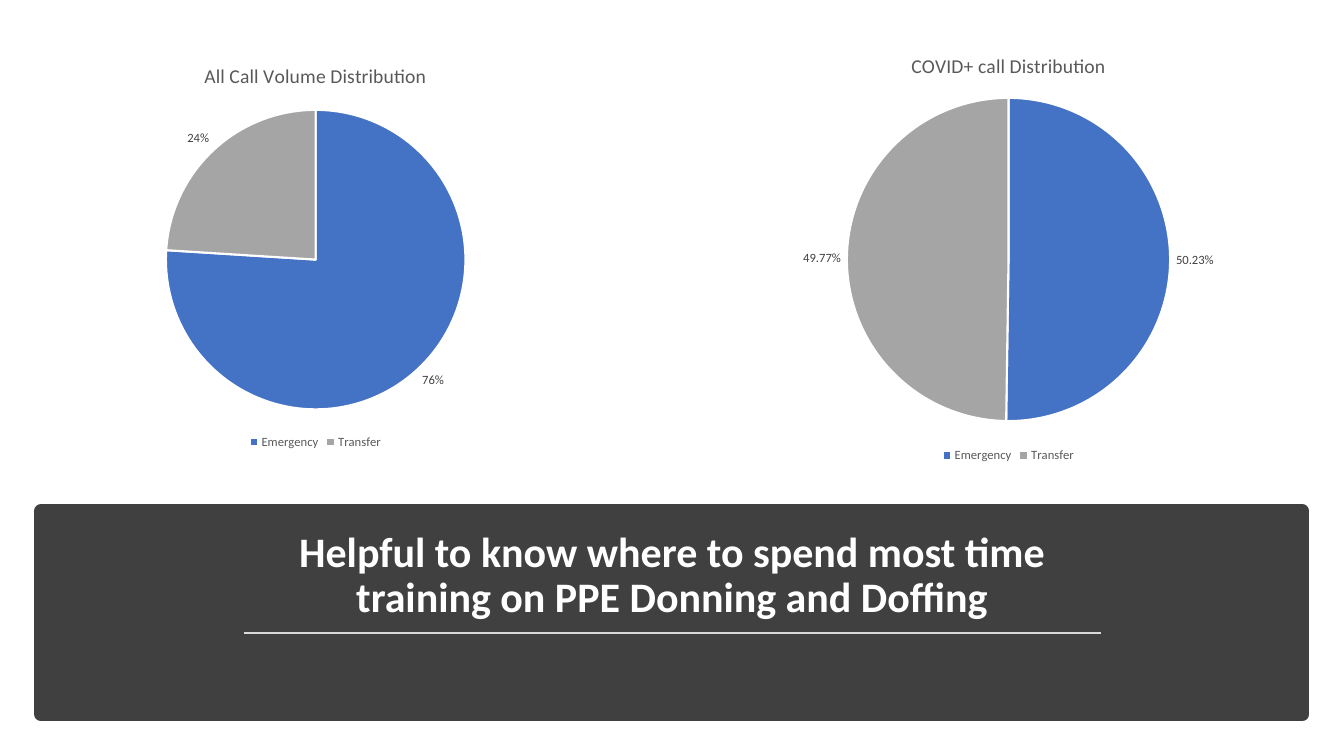
"""Build a slide that compares two call distributions above a titled band."""
from dataclasses import dataclass

from lxml.etree import SubElement
from pptx import Presentation
from pptx.chart.data import CategoryChartData as ChartData
from pptx.dml.color import RGBColor
from pptx.enum.chart import XL_CHART_TYPE as ChartType
from pptx.enum.chart import XL_LABEL_POSITION as LabelPosition
from pptx.enum.chart import XL_LEGEND_POSITION as LegendPosition
from pptx.enum.shapes import MSO_CONNECTOR as Connector
from pptx.enum.shapes import MSO_SHAPE as Shape
from pptx.enum.text import MSO_ANCHOR as Anchor
from pptx.enum.text import MSO_AUTO_SIZE as AutoSize
from pptx.enum.text import PP_ALIGN as Align
from pptx.oxml import parse_xml
from pptx.oxml.ns import nsdecls, qn
from pptx.util import Pt


@dataclass(frozen=True)
class Theme:
    font: str = "Calibri"
    white: str = "FFFFFF"
    band: str = "404040"
    rule: str = "D9D9D9"
    muted: str = "595959"
    slices: tuple = ("4472C4", "A5A5A5")
    title_size: float = 30
    chart_title_size: float = 14
    chart_size: float = 10
    label_size: float = 9


def color(value):
    return RGBColor.from_string(value)


def format_font(font, *, name, size, fill, bold=False):
    font.name = name
    font.size = Pt(size)
    font.bold = bold
    font.color.rgb = color(fill)


def write_text(frame, text, *, align=Align.CENTER, spacing=None, after=None, **style):
    frame.text = text
    paragraph = frame.paragraphs[0]
    paragraph.alignment = align
    if spacing is not None:
        paragraph.line_spacing = spacing
    if after is not None:
        paragraph.space_after = Pt(after)
    format_font(paragraph.runs[0].font, **style)


class SlideBuilder:
    def __init__(self, slide, theme):
        self.slide = slide
        self.theme = theme

    def band(self, left, top, width, height):
        shape = self.slide.shapes.add_shape(
            Shape.RECTANGLE, Pt(left), Pt(top), Pt(width), Pt(height))
        shape.shadow.inherit = False
        shape.fill.solid()
        shape.fill.fore_color.rgb = color(self.theme.band)
        shape.line.color.rgb = color(self.theme.band)
        shape.line.width = Pt(10)

    def title(self, text, left, top, width, height):
        title = self.slide.shapes.title
        title.left, title.top = Pt(left), Pt(top)
        title.width, title.height = Pt(width), Pt(height)
        frame = title.text_frame
        frame.word_wrap = True
        frame.auto_size = AutoSize.NONE
        frame.vertical_anchor = Anchor.BOTTOM
        write_text(frame, text, spacing=0.9, after=6, name=self.theme.font,
                   size=self.theme.title_size, fill=self.theme.white, bold=True)
        self.slide.shapes._spTree.append(title._element)

    def rule(self, left, top, width):
        line = self.slide.shapes.add_connector(
            Connector.STRAIGHT, Pt(left), Pt(top), Pt(left + width), Pt(top))
        line.line.color.rgb = color(self.theme.rule)
        line.line.width = Pt(1.75)
        SubElement(line._element.spPr, qn("a:effectLst"))

    def pie(self, heading, values, box, circle, number_format, percent=False):
        theme = self.theme
        data = ChartData()
        data.categories = ["Emergency", "Transfer"]
        data.add_series("Series 1", values)
        chart = self.slide.shapes.add_chart(
            ChartType.PIE, *(Pt(length) for length in box), data).chart
        format_font(chart.font, name=theme.font, size=theme.chart_size, fill="000000")
        chart.has_title = True
        write_text(chart.chart_title.text_frame, heading, name=theme.font,
                   size=theme.chart_title_size, fill=theme.muted)
        chart.chart_title.include_in_layout = False
        chart.has_legend = True
        chart.legend.position = LegendPosition.BOTTOM
        chart.legend.include_in_layout = False
        format_font(chart.legend.font, name=theme.font, size=theme.label_size,
                    fill=theme.muted)

        plot = chart.plots[0]
        plot.vary_by_categories = True
        for index, fill in enumerate(theme.slices):
            piece = plot.series[0].points[index].format
            piece.fill.solid()
            piece.fill.fore_color.rgb = color(fill)
            piece.line.color.rgb = color(theme.white)
            piece.line.width = Pt(1.5)
        labels = plot.series[0].data_labels
        labels.show_value = not percent
        labels.show_percentage = percent
        labels.number_format = number_format
        labels.number_format_is_linked = False
        labels.position = LabelPosition.OUTSIDE_END
        format_font(labels.font, name=theme.font, size=theme.label_size, fill=theme.band)
        self.place_pie(chart, box, circle)

    def place_pie(self, chart, box, circle):
        left, top, width, height = box
        circle_left, circle_top, diameter = circle
        fractions = {"x": (circle_left - left) / width, "y": (circle_top - top) / height,
                     "w": diameter / width, "h": diameter / height}
        modes = '<c:xMode val="edge"/><c:yMode val="edge"/>'
        sizes = "".join(f'<c:{key} val="{value:.3f}"/>' for key, value in fractions.items())
        area = chart._chartSpace.chart.plotArea
        for layout in area.findall(qn("c:layout")):
            area.remove(layout)
        area.insert(0, parse_xml(
            f'<c:layout {nsdecls("c")}><c:manualLayout><c:layoutTarget val="inner"/>'
            f'{modes}{sizes}</c:manualLayout></c:layout>'))


def main():
    presentation = Presentation()
    presentation.slide_width, presentation.slide_height = Pt(960), Pt(540)
    slide = presentation.slides.add_slide(presentation.slide_layouts[5])
    builder = SlideBuilder(slide, Theme())
    text_left, text_width = 174.25, 612
    builder.band(29.5, 365, 900.7, 145.4)
    builder.title("Helpful to know where to spend most time training on PPE Donning and Doffing",
                  text_left, 374.4, text_width, 73.4)
    builder.rule(text_left, 452, text_width)
    builder.pie("COVID+ call Distribution", (0.5023, 0.4977),
                (510.5, 24.5, 419.8, 308.9), (605, 70, 231), "0.00%")
    builder.pie("All Call Volume Distribution", (76, 24),
                (54.7, 32.4, 341.3, 291.6), (118.5, 78.5, 214), "0%", percent=True)
    presentation.save("out.pptx")


if __name__ == "__main__":
    main()
